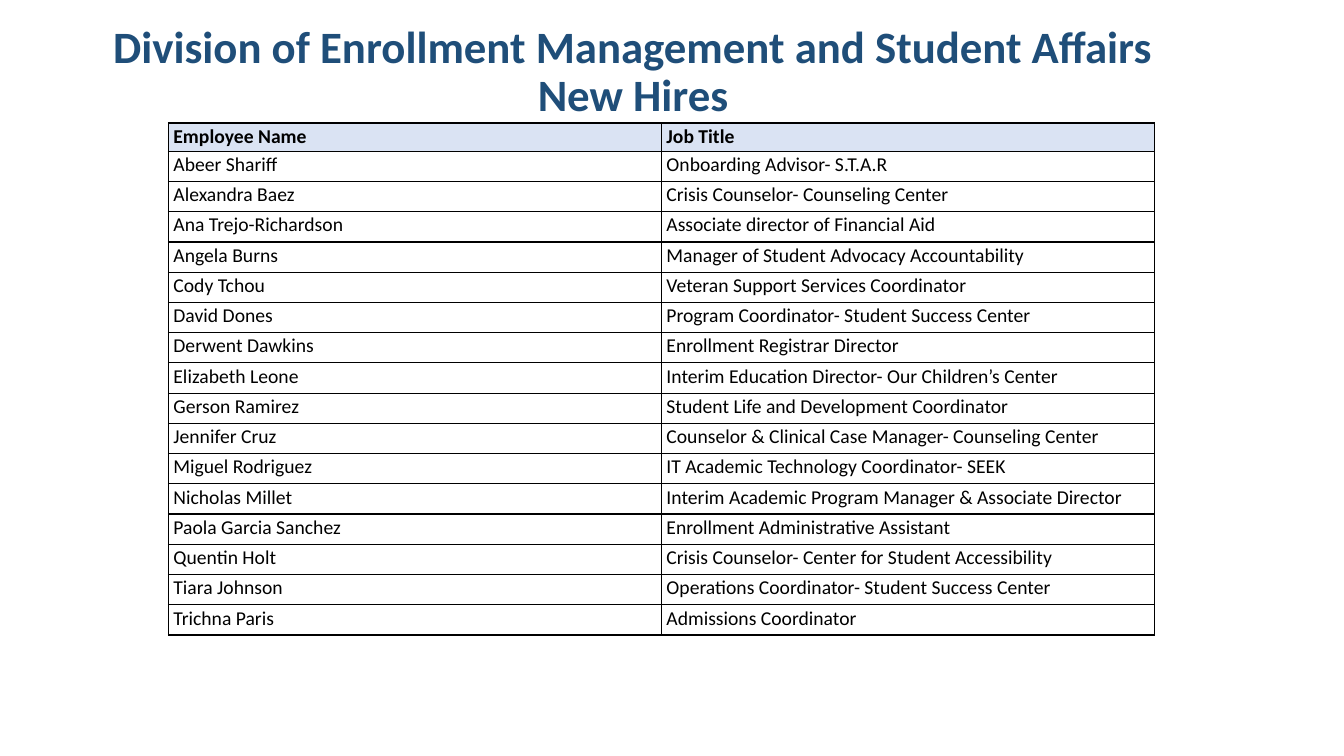
"""Build the new hires slide with its title and staff table."""
from dataclasses import dataclass

from lxml.etree import SubElement
from pptx import Presentation
from pptx.dml.color import RGBColor
from pptx.enum.text import MSO_ANCHOR, PP_ALIGN
from pptx.oxml.ns import qn
from pptx.util import Pt

PX = 9144


@dataclass(frozen=True)
class Theme:
    font: str = "Calibri"
    title_size: int = 32
    table_size: int = 14
    border_width: int = 1
    title: str = "1F4E79"
    text: str = "000000"
    border: str = "000000"
    header_fill: str = "DAE3F3"
    body_fill: str = "FFFFFF"


THEME = Theme()

TITLE = "Division of Enrollment Management and Student Affairs \vNew Hires "

HEADER = ("Employee Name", "Job Title")

NEW_HIRES = [
    ("Abeer Shariff", "Onboarding Advisor- S.T.A.R"),
    ("Alexandra Baez", "Crisis Counselor- Counseling Center"),
    ("Ana Trejo-Richardson", "Associate director of Financial Aid"),
    ("Angela Burns", "Manager of Student Advocacy Accountability"),
    ("Cody Tchou", "Veteran Support Services Coordinator"),
    ("David Dones", "Program Coordinator- Student Success Center"),
    ("Derwent Dawkins", "Enrollment Registrar Director"),
    ("Elizabeth Leone", "Interim Education Director- Our Children’s Center"),
    ("Gerson Ramirez", "Student Life and Development Coordinator"),
    ("Jennifer Cruz", "Counselor & Clinical Case Manager- Counseling Center"),
    ("Miguel Rodriguez", "IT Academic Technology Coordinator- SEEK"),
    ("Nicholas Millet", "Interim Academic Program Manager & Associate Director"),
    ("Paola Garcia Sanchez", "Enrollment Administrative Assistant"),
    ("Quentin Holt", "Crisis Counselor- Center for Student Accessibility"),
    ("Tiara Johnson", "Operations Coordinator- Student Success Center"),
    ("Trichna Paris", "Admissions Coordinator"),
]


def px(*lengths):
    """Turn pixel lengths into EMU."""
    return [length * PX for length in lengths]


def style_paragraph(para, size, color, bold, spacing):
    """Set the font and line spacing of a paragraph."""
    para.line_spacing = spacing
    para.font.name = THEME.font
    para.font.size = Pt(size)
    para.font.bold = bold
    para.font.color.rgb = RGBColor.from_string(color)


def add_title(page, text, left, top, width, height):
    """Add the centred slide title."""
    box = page.shapes.add_textbox(*px(left, top, width, height))
    frame = box.text_frame
    frame.word_wrap = True
    frame.vertical_anchor = MSO_ANCHOR.MIDDLE
    para = frame.paragraphs[0]
    para.text = text
    para.alignment = PP_ALIGN.CENTER
    style_paragraph(para, THEME.title_size, THEME.title, True, 0.9)


def add_borders(cell):
    """Draw a solid line on every side of a cell."""
    properties = cell._tc.get_or_add_tcPr()
    for side in ("a:lnL", "a:lnR", "a:lnT", "a:lnB"):
        line = SubElement(properties, qn(side), w=str(Pt(THEME.border_width)))
        fill = SubElement(line, qn("a:solidFill"))
        SubElement(fill, qn("a:srgbClr"), val=THEME.border)


def fill_cell(cell, text, is_header):
    """Write and style one table cell."""
    cell.margin_left, cell.margin_right = px(5, 5)
    cell.margin_top = cell.margin_bottom = 0
    add_borders(cell)
    cell.fill.solid()
    color = THEME.header_fill if is_header else THEME.body_fill
    cell.fill.fore_color.rgb = RGBColor.from_string(color)
    para = cell.text_frame.paragraphs[0]
    para.text = text
    style_paragraph(para, THEME.table_size, THEME.text, is_header, 1.07)


def add_staff_table(page, rows, left, top, width, header_height, row_height):
    """Add the table of names and job titles."""
    height = header_height + row_height * (len(rows) - 1)
    frame = page.shapes.add_table(
        len(rows), len(HEADER), *px(left, top, width, height))
    table = frame.table
    for index, values in enumerate(rows):
        is_header = index == 0
        table.rows[index].height = (header_height if is_header else row_height) * PX
        for cell, text in zip(table.rows[index].cells, values):
            fill_cell(cell, text, is_header)


def main():
    """Create the deck and save it."""
    deck = Presentation()
    deck.slide_width, deck.slide_height = px(1333, 750)
    page = deck.slides.add_slide(deck.slide_layouts[6])
    add_title(page, TITLE, 58, 0, 1150, 145)
    add_staff_table(page, [HEADER, *NEW_HIRES], 167, 122, 978, 28, 30)
    deck.save("out.pptx")


if __name__ == "__main__":
    main()
